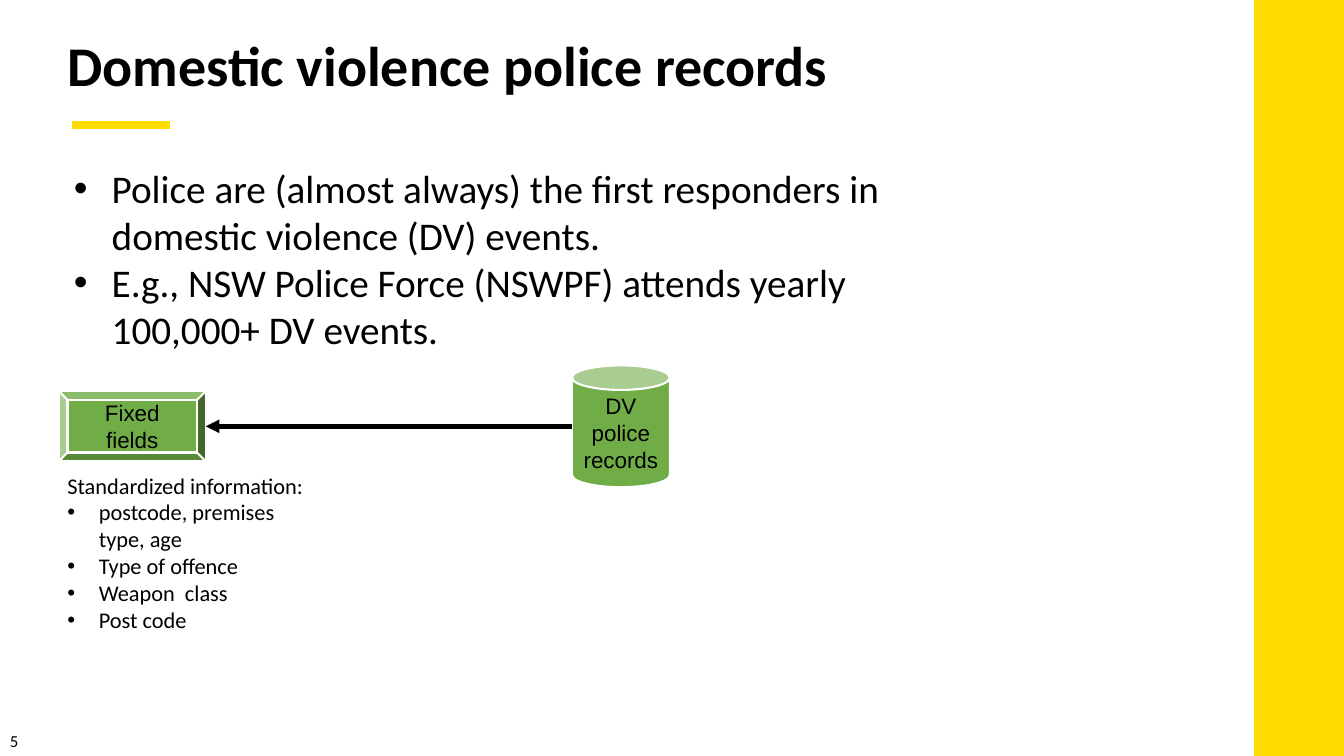
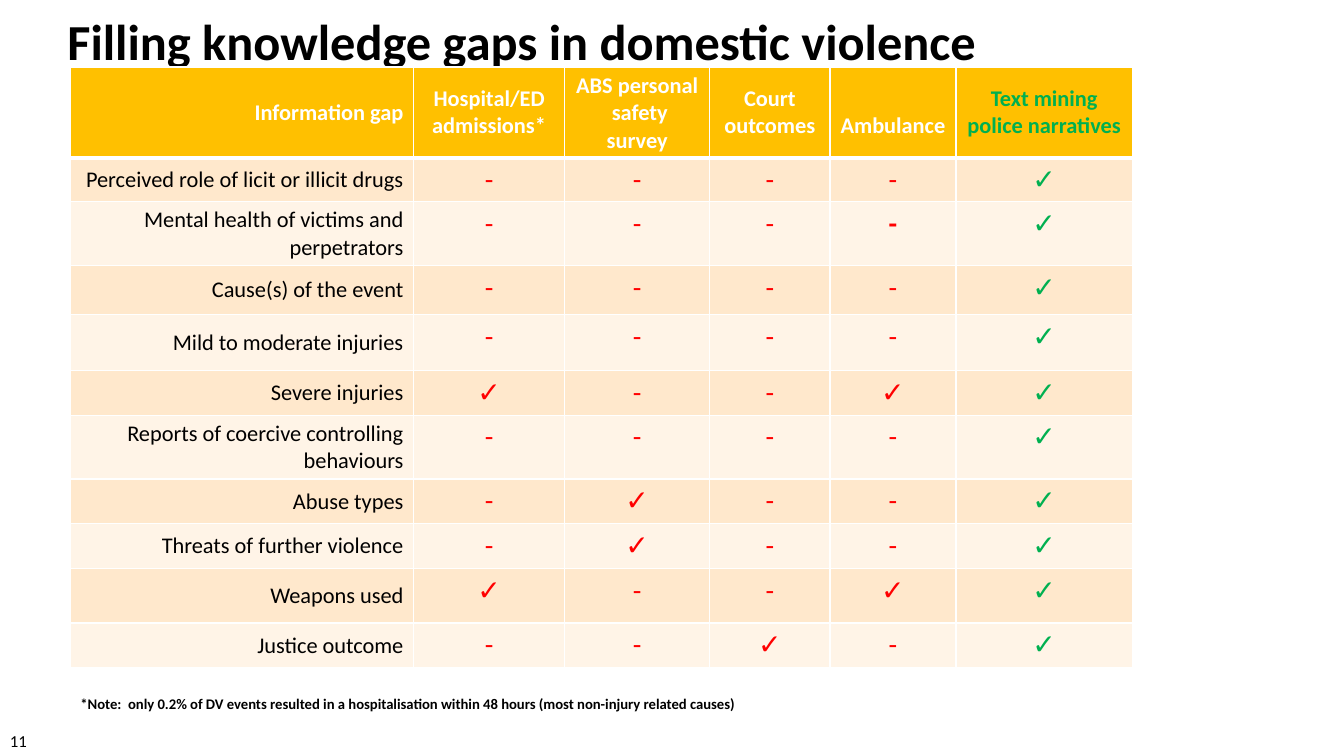
"""Build two slides on domestic violence police records."""
from lxml.etree import SubElement
from pptx import Presentation
from pptx.dml.color import RGBColor
from pptx.enum.shapes import MSO_CONNECTOR, MSO_SHAPE
from pptx.enum.text import MSO_ANCHOR, MSO_AUTO_SIZE, PP_ALIGN
from pptx.oxml.ns import qn
from pptx.util import Pt

BLACK, WHITE, YELLOW, RED, GREEN = "000000", "FFFFFF", "FFDC00", "FF0000", "00B050"
SHAPE_GREEN, HEADER_FILL, ROW_FILLS = "70AD47", "FFC000", ("FFE8CC", "FFF4E7")
BODY_FONT, SHAPE_FONT = "Calibri", "Arial"
SLIDE_WIDTH, SLIDE_HEIGHT = 960, 540
TITLE_LEFT, TITLE_WIDTH = 41, 901

POLICE_POINTS = [
    "Police are (almost always) the first responders in domestic violence (DV) events.",
    "E.g., NSW Police Force (NSWPF) attends yearly 100,000+ DV events.",
]
FIELDS_HEADING = "Standardized information:"
FIELDS = ["postcode, premises type, age", "Type of offence", "Weapon  class", "Post code"]
DIAGRAM = [
    (MSO_SHAPE.BEVEL, "Fixed fields", (42, 279.5, 105, 50)),
    (MSO_SHAPE.CAN, "DV police records", (408.5, 261, 70, 87)),
]
ARROW_Y = 304.5

HEADERS = ["Information gap", "Hospital/ED admissions*", "ABS personal  safety survey",
           "Court outcomes", "Ambulance", "Text mining police narratives"]
GAPS = [
    ("Perceived role of licit or illicit drugs", "----✓"),
    ("Mental health of victims and perpetrators", "----✓"),
    ("Cause(s) of the event", "----✓"),
    ("Mild to moderate injuries", "----✓"),
    ("Severe injuries", "✓--✓✓"),
    ("Reports of coercive controlling behaviours", "----✓"),
    ("Abuse types", "-✓--✓"),
    ("Threats of further violence", "-✓--✓"),
    ("Weapons used", "✓--✓✓"),
    ("Justice outcome", "--✓-✓"),
]
BOLD_DASH = (2, 4)
COLUMN_WIDTHS = [245, 108, 103.5, 86, 90, 126]
ROW_HEIGHTS = [61, 27, 35, 35, 40, 32, 32, 32, 32, 39, 32]
NOTE = ("*Note:  only 0.2% of DV events resulted in a hospitalisation within 48 hours "
        "(most non-injury related causes)")


def color(value):
    return RGBColor.from_string(value)


def box(left, top, width, height):
    return Pt(left), Pt(top), Pt(width), Pt(height)


def format_runs(text_frame, size, fill=BLACK, bold=False, font=BODY_FONT, align=PP_ALIGN.LEFT):
    for paragraph in text_frame.paragraphs:
        paragraph.alignment = align
        for run in paragraph.runs:
            run.font.name = font
            run.font.size = Pt(size)
            run.font.bold = bold
            run.font.color.rgb = color(fill)


def add_bullet(paragraph, left, hanging):
    properties = paragraph._p.get_or_add_pPr()
    properties.set("marL", str(Pt(left)))
    properties.set("indent", str(-Pt(hanging)))
    SubElement(properties, qn("a:buFont"), typeface="Arial")
    SubElement(properties, qn("a:buChar"), char="•")


def add_text(slide, lines, place, size, bold=False):
    text_frame = slide.shapes.add_textbox(*box(*place)).text_frame
    text_frame.word_wrap = True
    text_frame.text = "\n".join(lines)
    format_runs(text_frame, size, bold=bold)
    return text_frame


def add_titled_slide(presentation, title, top, height, size, number):
    slide = presentation.slides.add_slide(presentation.slide_layouts[5])
    shape = slide.shapes.title
    shape.left, shape.top, shape.width, shape.height = box(TITLE_LEFT, top, TITLE_WIDTH, height)
    text_frame = shape.text_frame
    text_frame.text = title
    text_frame.auto_size = MSO_AUTO_SIZE.NONE
    text_frame.vertical_anchor = MSO_ANCHOR.TOP
    format_runs(text_frame, size, bold=True)
    add_text(slide, [str(number)], (0, 518.4, 30, 21.6), 12)
    return slide


def add_filled_shape(slide, kind, place, fill):
    shape = slide.shapes.add_shape(kind, *box(*place))
    shape.shadow.inherit = False
    shape.fill.solid()
    shape.fill.fore_color.rgb = color(fill)
    shape.line.fill.background()
    return shape


def add_line(slide, start, end, fill, width):
    connector = slide.shapes.add_connector(
        MSO_CONNECTOR.STRAIGHT, *(Pt(value) for value in (*start, *end)))
    connector.line.color.rgb = color(fill)
    connector.line.width = Pt(width)
    SubElement(connector._element.spPr, qn("a:effectLst"))
    return connector


def set_borders(cell, **widths):
    properties = cell._tc.get_or_add_tcPr()
    for index, side in enumerate(("lnL", "lnR", "lnT", "lnB")):
        line = properties.makeelement(qn(f"a:{side}"), {"w": str(Pt(widths.get(side, 1)))})
        solid = SubElement(line, qn("a:solidFill"))
        SubElement(solid, qn("a:srgbClr"), val=WHITE)
        properties.insert(index, line)


def style_cell(cell, text, fill, size, text_fill, bold, align, anchor):
    cell.text = text
    cell.vertical_anchor = anchor
    cell.fill.solid()
    cell.fill.fore_color.rgb = color(fill)
    format_runs(cell.text_frame, size, text_fill, bold, align=align)


def build_records_slide(presentation):
    slide = add_titled_slide(presentation, "Domestic violence police records", 18, 55.5, 40, 5)
    band_left = 895.7
    add_filled_shape(slide, MSO_SHAPE.RECTANGLE,
                     (band_left, 0, SLIDE_WIDTH - band_left, SLIDE_HEIGHT), YELLOW)
    add_line(slide, (51.2, 89.2), (121.5, 89.2), YELLOW, 6)

    points = add_text(slide, POLICE_POINTS, (18.7, 113.8, 687.6, 143.3), 28)
    for paragraph in points.paragraphs:
        add_bullet(paragraph, 54, 27)

    for kind, label, place in DIAGRAM:
        shape = add_filled_shape(slide, kind, place, SHAPE_GREEN)
        shape.line.color.rgb = color(WHITE)
        shape.line.width = Pt(1.5)
        shape.text_frame.text = label
        shape.text_frame.word_wrap = True
        shape.text_frame.vertical_anchor = MSO_ANCHOR.MIDDLE
        format_runs(shape.text_frame, 16, font=SHAPE_FONT, align=PP_ALIGN.CENTER)

    fields_place, records_place = (place for _, _, place in DIAGRAM)
    arrow = add_line(slide, (records_place[0], ARROW_Y),
                     (fields_place[0] + fields_place[2], ARROW_Y), BLACK, 3.25)
    SubElement(arrow.line._get_or_add_ln(), qn("a:tailEnd"), type="triangle")

    fields = add_text(slide, [FIELDS_HEADING, *FIELDS], (41, 333.4, 190.8, 123.8), 16)
    for paragraph in fields.paragraphs[1:]:
        add_bullet(paragraph, 22.5, 22.5)


def build_gaps_slide(presentation):
    slide = add_titled_slide(
        presentation, "Filling knowledge gaps in domestic violence", 3.6, 51, 36, 11)
    frame = slide.shapes.add_table(
        len(GAPS) + 1, len(HEADERS),
        *box(50.4, 47.9, sum(COLUMN_WIDTHS), sum(ROW_HEIGHTS)))
    table = frame.table
    table.horz_banding = False
    for column, width in zip(table.columns, COLUMN_WIDTHS):
        column.width = Pt(width)
    for row, height in zip(table.rows, ROW_HEIGHTS):
        row.height = Pt(height)

    last = len(HEADERS) - 1
    for column, header in enumerate(HEADERS):
        cell = table.cell(0, column)
        style_cell(cell, header, HEADER_FILL, 16, GREEN if column == last else WHITE, True,
                   PP_ALIGN.CENTER if column else PP_ALIGN.RIGHT, MSO_ANCHOR.MIDDLE)
        set_borders(cell, lnB=3)
    table.cell(0, HEADERS.index("Ambulance")).margin_top = Pt(23)

    for row, (gap, marks) in enumerate(GAPS, start=1):
        fill = ROW_FILLS[(row - 1) % 2]
        style_cell(table.cell(row, 0), gap, fill, 16, BLACK, False,
                   PP_ALIGN.RIGHT, MSO_ANCHOR.MIDDLE)
        for column, mark in enumerate(marks, start=1):
            bold = mark == "✓" or (row, column) == BOLD_DASH
            style_cell(table.cell(row, column), mark, fill, 20,
                       GREEN if column == last else RED, bold,
                       PP_ALIGN.CENTER, MSO_ANCHOR.TOP)
        for column in range(len(HEADERS)):
            set_borders(table.cell(row, column), lnT=3 if row == 1 else 1)

    add_text(slide, [NOTE], (50.4, 492.5, 497, 20), 10.5, bold=True)


def main():
    presentation = Presentation()
    presentation.slide_width, presentation.slide_height = Pt(SLIDE_WIDTH), Pt(SLIDE_HEIGHT)
    build_records_slide(presentation)
    build_gaps_slide(presentation)
    presentation.save("out.pptx")


if __name__ == "__main__":
    main()
